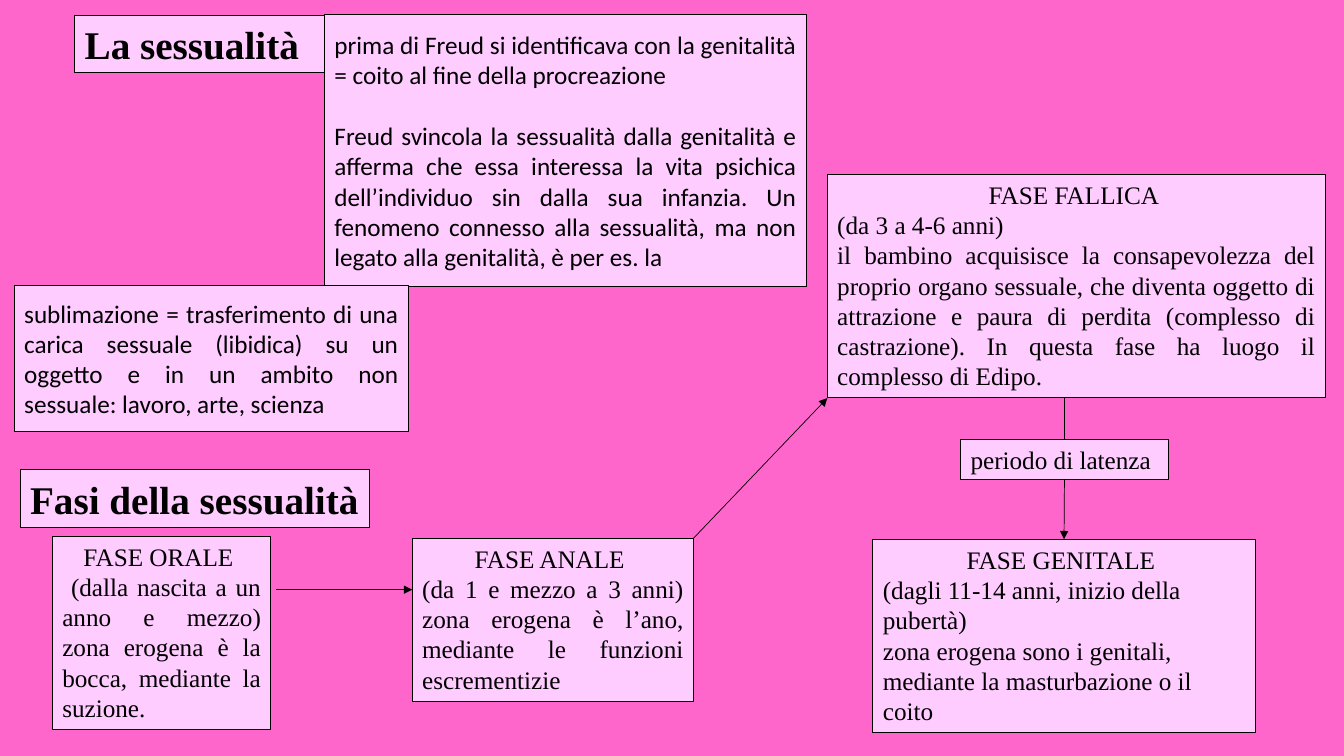
"""Build a concept map slide on sexuality and its phases according to Freud."""
import dataclasses

import pptx
import pptx.dml.color
import pptx.enum.shapes
import pptx.enum.text
import pptx.oxml
import pptx.util
from pptx.util import Cm

ALIGN = pptx.enum.text.PP_ALIGN
ANCHOR = pptx.enum.text.MSO_ANCHOR


@dataclasses.dataclass(frozen=True)
class Theme:
    """Colours, fonts and sizes of the slide."""
    background: str = "FF66CC"
    panel: str = "FFCCFF"
    ink: str = "000000"
    serif: str = "Times New Roman"
    sans: str = "Calibri"
    heading: int = 28
    body: int = 18
    paragraph_gap: int = 22
    thin: float = 0.5
    outline: float = 0.75
    frame: float = 1


THEME = Theme()


def colour(code):
    """Turn a hex code into a colour."""
    return pptx.dml.color.RGBColor.from_string(code)


def paint(box, outline):
    """Give a box the panel fill and a dark outline."""
    box.fill.solid()
    box.fill.fore_color.rgb = colour(THEME.panel)
    box.line.color.rgb = colour(THEME.ink)
    box.line.width = pptx.util.Pt(outline)


def write(box, lines, font, size, anchor=ANCHOR.TOP, bold=False):
    """Fill a box with (text, alignment) paragraphs."""
    frame = box.text_frame
    frame.text = "\n".join(text for text, _ in lines)
    frame.word_wrap = True
    frame.auto_size = pptx.enum.text.MSO_AUTO_SIZE.NONE
    frame.vertical_anchor = anchor
    for para, (_, alignment) in zip(frame.paragraphs, lines):
        para.alignment = alignment
        for span in para.runs:
            span.font.name = font
            span.font.size = pptx.util.Pt(size)
            span.font.bold = bold
            span.font.color.rgb = colour(THEME.ink)


def add_box(page, place, outline=THEME.outline):
    """Add a plain panel at left, top, width, height in centimetres."""
    box = page.shapes.add_shape(
        pptx.enum.shapes.MSO_SHAPE.RECTANGLE, *map(Cm, place))
    box.shadow.inherit = False
    paint(box, outline)
    return box


def add_heading(page, place, text):
    """Add a panel with a bold heading."""
    box = add_box(page, place)
    write(box, [(text, ALIGN.LEFT)], THEME.serif, THEME.heading, bold=True)


def add_title(page, place, text):
    """Move and format the title placeholder as a heading."""
    title = page.shapes.title
    title.left, title.top, title.width, title.height = map(Cm, place)
    paint(title, THEME.outline)
    write(title, [(text, ALIGN.LEFT)], THEME.serif, THEME.heading, bold=True)


def add_phase(page, place, name, details, alignment=ALIGN.JUSTIFY):
    """Add a phase panel: centred name above its details."""
    box = add_box(page, place)
    lines = [(name + " ", ALIGN.CENTER)]
    lines += [(text, alignment) for text in details]
    write(box, lines, THEME.serif, THEME.body)
    return box


def add_note(page, place, texts):
    """Add a vertically centred panel of spaced, justified paragraphs."""
    box = add_box(page, place, THEME.frame)
    write(box, [(text, ALIGN.JUSTIFY) for text in texts],
          THEME.sans, THEME.body, ANCHOR.MIDDLE)
    for para in box.text_frame.paragraphs[1:]:
        para.space_before = pptx.util.Pt(THEME.paragraph_gap)


def add_line(page, start, end, arrow=True):
    """Add a straight line, with an arrowhead at its end if wanted."""
    line = page.shapes.add_connector(
        pptx.enum.shapes.MSO_CONNECTOR.STRAIGHT, *start, *end)
    line.line.color.rgb = colour(THEME.ink)
    line.line.width = pptx.util.Pt(THEME.thin)
    if arrow:
        head = pptx.oxml.parse_xml(
            '<a:tailEnd xmlns:a="http://schemas.openxmlformats.org/'
            'drawingml/2006/main" type="triangle"/>')
        line.line._get_or_add_ln().append(head)
    line._element.spPr.append(pptx.oxml.parse_xml(
        '<a:effectLst xmlns:a="http://schemas.openxmlformats.org/'
        'drawingml/2006/main"/>'))
    return line


def add_phases(page):
    """Add the four phases, the latency period and the links between them."""
    oral = add_phase(page, (1.32, 13.51, 5.51, 4.88), "FASE ORALE", [
        " (dalla nascita a un anno e mezzo) zona erogena è la bocca, "
        "mediante la suzione."])
    anal = add_phase(page, (10.39, 13.56, 7.09, 4.11), "FASE ANALE", [
        "(da 1 e mezzo a 3 anni) zona erogena è l’ano, mediante le "
        "funzioni escrementizie"])
    phallic = add_phase(page, (20.85, 4.39, 12.55, 5.64), "FASE FALLICA", [
        "(da 3 a 4-6 anni)",
        "il bambino acquisisce la consapevolezza del proprio organo "
        "sessuale, che diventa oggetto di attrazione e paura di perdita "
        "(complesso di castrazione). In questa fase ha luogo il complesso "
        "di Edipo."])
    genital = add_phase(page, (22, 13.59, 9.63, 4.88), "FASE GENITALE", [
        "(dagli 11-14 anni, inizio della pubertà)",
        "zona erogena sono i genitali, mediante la masturbazione o il coito"],
        ALIGN.LEFT)
    latency = add_box(page, (24.21, 11.07, 5.23, 1.02))
    write(latency, [("periodo di latenza", ALIGN.LEFT)],
          THEME.serif, THEME.body)

    level = Cm(14.86)
    add_line(page, (oral.left + oral.width + Cm(0.13), level),
             (anal.left, level))
    phallic_bottom = phallic.top + phallic.height
    add_line(page, (anal.left + anal.width, anal.top),
             (phallic.left, phallic_bottom))
    centre = latency.left + latency.width // 2
    into_latency = add_line(page, (centre, phallic_bottom),
                            (centre, latency.top), arrow=False)
    into_latency.end_connect(latency, 0)
    out_of_latency = add_line(page, (centre, latency.top + latency.height),
                              (centre, genital.top))
    out_of_latency.begin_connect(latency, 2)
    out_of_latency.end_connect(genital, 0)


def main():
    """Build and save the slide."""
    deck = pptx.Presentation()
    deck.slide_width, deck.slide_height = Cm(33.87), Cm(19.05)
    page = deck.slides.add_slide(deck.slide_layouts[5])
    page.background.fill.solid()
    page.background.fill.fore_color.rgb = colour(THEME.background)

    add_title(page, (1.88, 0.38, 6.32, 1.45), "La sessualità")
    add_phases(page)
    add_heading(page, (0.51, 11.84, 8.81, 1.45), "Fasi della sessualità")
    add_note(page, (8.18, 0.36, 12.14, 6.86), [
        "prima di Freud si identificava con la genitalità = coito al fine "
        "della procreazione",
        "Freud svincola la sessualità dalla genitalità e afferma che essa "
        "interessa la vita psichica dell’individuo sin dalla sua infanzia. "
        "Un fenomeno connesso alla sessualità, ma non legato alla "
        "genitalità, è per es. la"])
    add_note(page, (0.36, 7.19, 9.93, 3.68), [
        "sublimazione = trasferimento di una carica sessuale (libidica) su "
        "un oggetto e in un ambito non sessuale: lavoro, arte, scienza"])
    deck.save("out.pptx")


if __name__ == "__main__":
    main()
